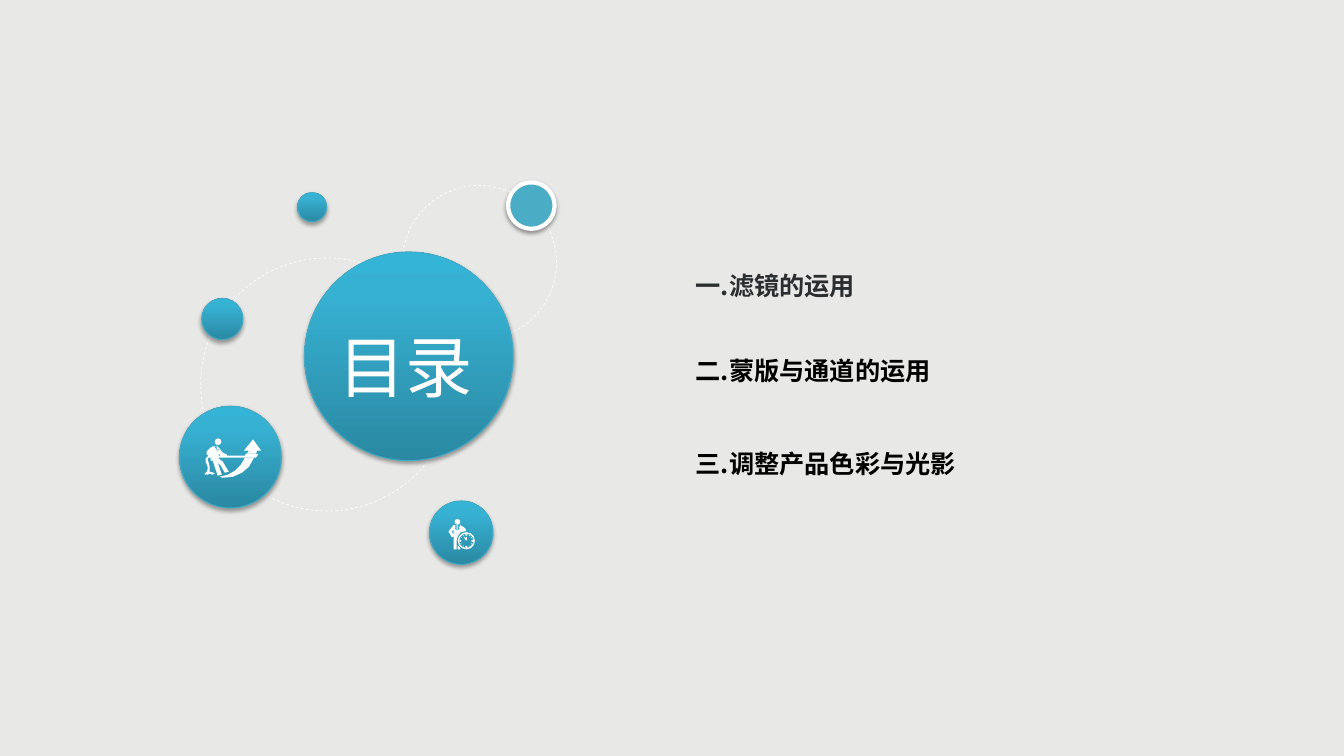
import copy
import math

import pptx
import pptx.dml.color
import pptx.enum.dml
import pptx.enum.shapes
import pptx.enum.text
import pptx.oxml
import pptx.oxml.ns
import pptx.util
from pptx.util import Inches

RGBColor = pptx.dml.color.RGBColor
OVAL = pptx.enum.shapes.MSO_SHAPE.OVAL
DONUT = pptx.enum.shapes.MSO_SHAPE.DONUT
ALIGN = pptx.enum.text.PP_ALIGN

BACKGROUND = RGBColor(0xE8, 0xE8, 0xE6)
WHITE = RGBColor(0xFF, 0xFF, 0xFF)
BLACK = RGBColor(0x00, 0x00, 0x00)
CHARCOAL = RGBColor(0x2B, 0x2E, 0x30)
TEAL = RGBColor(0x4B, 0xAC, 0xC6)
TEAL_EDGE = RGBColor(0x46, 0xAA, 0xC5)
BALL_STOPS = [
    (0, RGBColor(0x2A, 0x88, 0xA2)),
    (0.8, RGBColor(0x37, 0xB1, 0xD2)),
    (1, RGBColor(0x34, 0xB4, 0xD6)),
]
FONT = "Noto Sans CJK SC"

# Icon outlines, in hundredths of an inch on the slide
CLOCK_MAN = [
    [(462, 527), (462, 525), (461, 524), (460, 523), (458, 522), (457, 521),
     (456, 521), (457, 522), (455, 523), (456, 524), (454, 527), (454, 521),
     (453, 521), (453, 527), (451, 524), (452, 523), (451, 522), (452, 521),
     (450, 521), (449, 522), (446, 526), (445, 527), (445, 528), (446, 529),
     (448, 533), (450, 532), (450, 545), (453, 545), (453, 536), (454, 532),
     (457, 528)],
    [(450, 530), (449, 529), (448, 527), (450, 526)],
]
CLOCK_MAN_LEG = [[(454, 541), (454, 545), (457, 545), (456, 543)]]
CLOCK_HANDS = [[(463, 536), (463, 533), (462, 533), (462, 535), (460, 532),
                (460, 533), (462, 536)]]
ARROW_TAIL = [[(243, 454), (239, 461), (233, 467), (226, 471), (218, 473),
               (221, 474), (231, 473), (240, 469), (247, 463), (252, 454)]]
ARROW_HEAD = [[(245, 450), (254, 450), (255, 447), (259, 447), (251, 436),
               (242, 447), (247, 447)]]
ROPE_MAN = [
    [(255, 450), (244, 450), (243, 452), (225, 452), (225, 451), (221, 449),
     (217, 444), (216, 444), (217, 446), (216, 449), (216, 442), (215, 442),
     (215, 449), (214, 445), (213, 444), (214, 443), (211, 443), (209, 444),
     (206, 447), (205, 448), (205, 451), (207, 452), (204, 455), (204, 458),
     (206, 463), (206, 466), (205, 468), (203, 470), (204, 471), (206, 471),
     (208, 470), (211, 471), (213, 470), (212, 469), (208, 468), (208, 463),
     (207, 459), (206, 456), (207, 454), (209, 454), (209, 457), (211, 457),
     (216, 472), (220, 471), (216, 459), (219, 462), (223, 469), (227, 468),
     (221, 458), (217, 455), (217, 454), (254, 454), (256, 451)],
    [(217, 452), (217, 450), (218, 451), (219, 452)],
]


class ContentsSlide:
    def __init__(self, deck):
        self.page = deck.slides.add_slide(deck.slide_layouts[1])
        self.page.background.fill.solid()
        self.page.background.fill.fore_color.rgb = BACKGROUND

    def round_shape(self, left, top, size, kind=OVAL, fill=None, shapes=None):
        shape = (shapes or self.page.shapes).add_shape(
            kind, Inches(left), Inches(top), Inches(size), Inches(size))
        return self.paint(shape, fill)

    def paint(self, shape, fill):
        shape.shadow.inherit = False
        shape.line.fill.background()
        if fill is None:
            shape.fill.background()
        else:
            shape.fill.solid()
            shape.fill.fore_color.rgb = fill
        return shape

    def outline(self, shape, color, width):
        shape.line.color.rgb = color
        shape.line.width = pptx.util.Pt(width)

    def orbit(self, left, top, size):
        ring = self.round_shape(left, top, size)
        self.outline(ring, WHITE, 0.5)
        ring.line.dash_style = pptx.enum.dml.MSO_LINE.DASH

    def drop_shadow(self, shape, opacity, distance):
        effects = shape._element.spPr.find(pptx.oxml.ns.qn("a:effectLst"))
        effects.append(pptx.oxml.parse_xml(
            f'<a:outerShdw {pptx.oxml.ns.nsdecls("a")} blurRad="{pptx.util.Pt(3.1)}" '
            f'dist="{pptx.util.Pt(distance)}" dir="5400000" rotWithShape="0">'
            f'<a:srgbClr val="000000"><a:alpha val="{opacity * 1000}"/></a:srgbClr>'
            '</a:outerShdw>'))

    def ball(self, left, top, size):
        ball = self.round_shape(left, top, size)
        ball.fill.gradient()
        ball.fill.gradient_angle = 90
        stops = ball._element.spPr.find(".//" + pptx.oxml.ns.qn("a:gsLst"))
        stops.append(copy.deepcopy(stops[-1]))
        for stop, (position, color) in zip(ball.fill.gradient_stops, BALL_STOPS):
            stop.position = position
            stop.color.rgb = color
        self.outline(ball, TEAL_EDGE, 0.75)
        self.drop_shadow(ball, 35, 1.8)

    def ringed_ball(self, left, top, size):
        ball = self.round_shape(left, top, size, fill=TEAL)
        self.outline(ball, WHITE, 3)
        self.drop_shadow(ball, 38, 1.6)

    def icon_part(self, contours, shapes):
        first, *others = contours
        builder = shapes.build_freeform(*first[0], scale=Inches(0.01))
        builder.add_line_segments(first[1:])
        for contour in others:
            builder.move_to(*contour[0])
            builder.add_line_segments(contour[1:])
        self.paint(builder.convert_to_shape(), WHITE)

    def clock_icon(self):
        icon = self.page.shapes.add_group_shape().shapes
        for part in (CLOCK_MAN, CLOCK_MAN_LEG, CLOCK_HANDS):
            self.icon_part(part, icon)
        rim = self.round_shape(4.54, 5.28, 0.17, DONUT, WHITE, icon)
        rim.adjustments[0] = 0.08
        for hour in range(12):
            angle = math.radians(30 * hour)
            size = 0.01 if hour % 3 else 0.02
            self.round_shape(4.625 + 0.06 * math.sin(angle) - size / 2,
                             5.365 - 0.06 * math.cos(angle) - size / 2,
                             size, fill=WHITE, shapes=icon)
        self.round_shape(4.51, 5.15, 0.055, fill=WHITE, shapes=icon)

    def rope_icon(self):
        icon = self.page.shapes.add_group_shape().shapes
        for part in (ARROW_TAIL, ARROW_HEAD, ROPE_MAN):
            self.icon_part(part, icon)
        self.round_shape(2.13, 4.35, 0.065, fill=WHITE, shapes=icon)

    def text_area(self, index, left, top, width, height, inset_top):
        """Move a placeholder to the front and return its text frame."""
        area = self.page.placeholders[index]
        area.left, area.top = Inches(left), Inches(top)
        area.width, area.height = Inches(width), Inches(height)
        self.page.shapes._spTree.append(area._element)
        frame = area.text_frame
        frame.word_wrap = True
        frame.auto_size = pptx.enum.text.MSO_AUTO_SIZE.NONE
        frame.vertical_anchor = pptx.enum.text.MSO_ANCHOR.TOP
        frame.margin_left = frame.margin_right = Inches(0.1)
        frame.margin_top, frame.margin_bottom = Inches(inset_top), 0
        return frame


def write(paragraph, text, size, color, bold=False, align=ALIGN.LEFT, before=0):
    paragraph.alignment = align
    paragraph.line_spacing = pptx.util.Pt(size * 1.2)
    paragraph.space_before = pptx.util.Pt(before)
    properties = paragraph._p.get_or_add_pPr()
    properties.set("marL", "0")
    properties.set("indent", "0")
    properties.append(pptx.oxml.parse_xml(
        f'<a:buNone {pptx.oxml.ns.nsdecls("a")}/>'))
    run = paragraph.add_run()
    run.text = text
    font = run.font
    font.name, font.size, font.bold = FONT, pptx.util.Pt(size), bold
    font.color.rgb = color
    run._r.get_or_add_rPr().append(pptx.oxml.parse_xml(
        f'<a:ea {pptx.oxml.ns.nsdecls("a")} typeface="{FONT}"/>'))


def main():
    deck = pptx.Presentation()
    deck.slide_width, deck.slide_height = Inches(13.33), Inches(7.5)
    contents = ContentsSlide(deck)

    contents.orbit(3.99, 1.84, 1.53)
    contents.orbit(1.99, 2.56, 2.51)
    for left, top, size in [(3.02, 2.5, 2.07), (4.26, 4.97, 0.63), (2, 2.96, 0.41),
                            (2.95, 1.91, 0.29), (1.78, 4.03, 1.01)]:
        contents.ball(left, top, size)
    contents.ringed_ball(5.04, 1.81, 0.46)
    contents.clock_icon()
    contents.rope_icon()

    heading = contents.text_area(0, 3.16, 3.12, 1.72, 0.91, 0.11)
    write(heading.paragraphs[0], "目录", 48, WHITE, align=ALIGN.CENTER)

    chapters = contents.text_area(1, 6.8, 2.65, 3.68, 2.12, 0.03)
    write(chapters.paragraphs[0], "一.滤镜的运用", 18, CHARCOAL, bold=True)
    for chapter, gap in [("二.蒙版与通道的运用", 39), ("三.调整产品色彩与光影", 45)]:
        write(chapters.add_paragraph(), chapter, 18, BLACK, bold=True, before=gap)

    deck.save("out.pptx")


if __name__ == "__main__":
    main()
